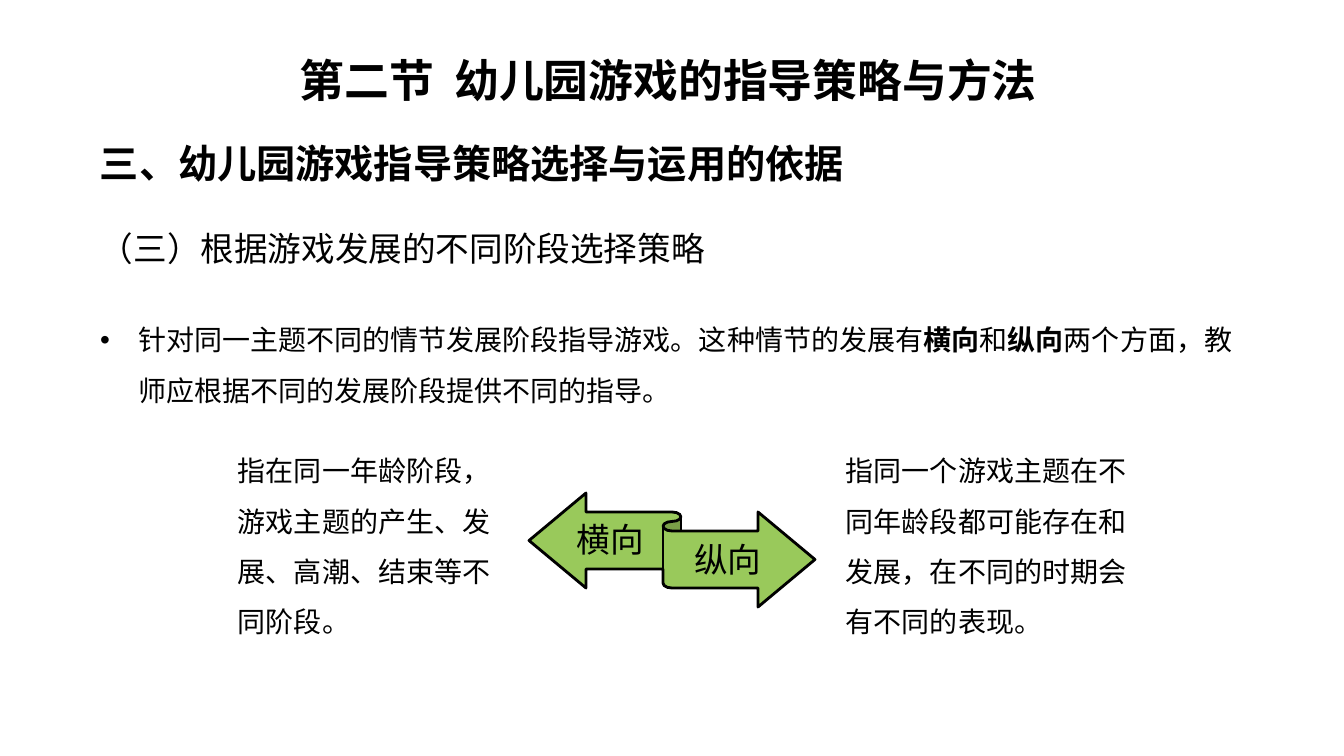
from lxml import etree
from pptx import Presentation
from pptx.dml.color import RGBColor
from pptx.enum.shapes import MSO_SHAPE
from pptx.enum.text import MSO_ANCHOR, PP_ALIGN
from pptx.oxml.ns import qn
from pptx.util import Emu, Pt

CENTER, LEFT = PP_ALIGN.CENTER, PP_ALIGN.LEFT
TOP, MIDDLE = MSO_ANCHOR.TOP, MSO_ANCHOR.MIDDLE
RIBBON = MSO_SHAPE.LEFT_RIGHT_RIBBON
COLORS = {"text": "000000", "ribbon": "99C95B"}
LATIN, CJK = "Arial", "Noto Sans CJK SC"
SCALE = 914400 / 100.8


def px(length):
    return Emu(round(length * SCALE))


def color(name):
    return RGBColor.from_string(COLORS[name])


def place(box, left, top, width, height):
    box.left, box.top, box.width, box.height = map(px, (left, top, width, height))


def prepare(frame, anchor=TOP):
    frame.word_wrap = True
    frame.vertical_anchor = anchor
    return frame


def style(paragraph, size, bold=False, latin=LATIN, align=LEFT, spacing=1.0):
    paragraph.alignment = align
    paragraph.line_spacing = spacing
    paragraph.space_before = Pt(0)
    for run in paragraph.runs:
        run.font.size = Pt(size)
        run.font.bold = bold
        run.font.name = latin
        run.font.color.rgb = color("text")
        east_asian = etree.SubElement(run.font._element, qn("a:ea"))
        east_asian.set("typeface", CJK)


def add_bullet(paragraph, indent):
    properties = paragraph._p.get_or_add_pPr()
    properties.set("marL", str(px(indent)))
    properties.set("indent", str(-px(indent)))
    etree.SubElement(properties, qn("a:buFont")).set("typeface", LATIN)
    etree.SubElement(properties, qn("a:buChar")).set("char", "•")


def add_text(slide, area, text, size, **formatting):
    frame = prepare(slide.shapes.add_textbox(*map(px, area)).text_frame)
    frame.text = text
    style(frame.paragraphs[0], size, **formatting)
    return frame


def add_ribbon(slide, area):
    ribbon = slide.shapes.add_shape(RIBBON, *map(px, area))
    ribbon.shadow.inherit = False
    ribbon.fill.solid()
    ribbon.fill.fore_color.rgb = color("ribbon")
    ribbon.line.color.rgb = color("text")
    ribbon.line.width = Pt(2)


def add_ribbon_label(slide, area, text):
    frame = add_text(slide, area, text, 24, align=CENTER)
    frame.vertical_anchor = MIDDLE
    frame.margin_left = frame.margin_right = 0
    frame.margin_top, frame.margin_bottom = px(9), px(10)
    frame.paragraphs[0].space_after = Pt(8)


def fill_title(title, text):
    place(title, 143, 41, 1051, 77)
    frame = prepare(title.text_frame, MIDDLE)
    frame.text = text
    style(frame.paragraphs[0], 32, bold=True, latin=CJK, align=CENTER)


def fill_body(body, pieces):
    place(body, 90, 301, 1180, 480)
    paragraph = prepare(body.text_frame).paragraphs[0]
    add_bullet(paragraph, 38)
    for text, _ in pieces:
        paragraph.add_run().text = text
    style(paragraph, 20, spacing=1.5)
    for run, (_, bold) in zip(paragraph.runs, pieces):
        run.font.bold = bold


def main():
    deck = Presentation()
    deck.slide_width, deck.slide_height = px(1344), px(756)
    slide = deck.slides.add_slide(deck.slide_layouts[1])

    # Section title and main point
    fill_title(slide.shapes.title, "第二节  幼儿园游戏的指导策略与方法")
    fill_body(slide.placeholders[1], [
        ("针对同一主题不同的情节发展阶段指导游戏。这种情节的发展有", False),
        ("横向", True),
        ("和", False),
        ("纵向", True),
        ("两个方面，教师应根据不同的发展阶段提供不同的指导。", False),
    ])

    # Headings
    headings = add_text(slide, (90, 134, 1137, 144),
                        "三、幼儿园游戏指导策略选择与运用的依据", 28,
                        bold=True, latin=CJK)
    subheading = headings.add_paragraph()
    subheading.text = "（三）根据游戏发展的不同阶段选择策略"
    style(subheading, 24, latin=CJK)
    subheading.space_before = Pt(30)

    # Two directions of development
    add_ribbon(slide, (529, 493, 286, 114))
    add_ribbon_label(slide, (563, 512, 95, 56), "横向")
    add_ribbon_label(slide, (672, 532, 112, 56), "纵向")

    # Explanations beside the ribbon
    add_text(slide, (228, 432, 273, 214),
             "指在同一年龄阶段，游戏主题的产生、发展、高潮、结束等不同阶段。",
             20, spacing=1.5)
    add_text(slide, (836, 432, 314, 214),
             "指同一个游戏主题在不同年龄段都可能存在和发展，在不同的时期会有不同的表现。",
             20, spacing=1.5)

    deck.save("out.pptx")


if __name__ == "__main__":
    main()
